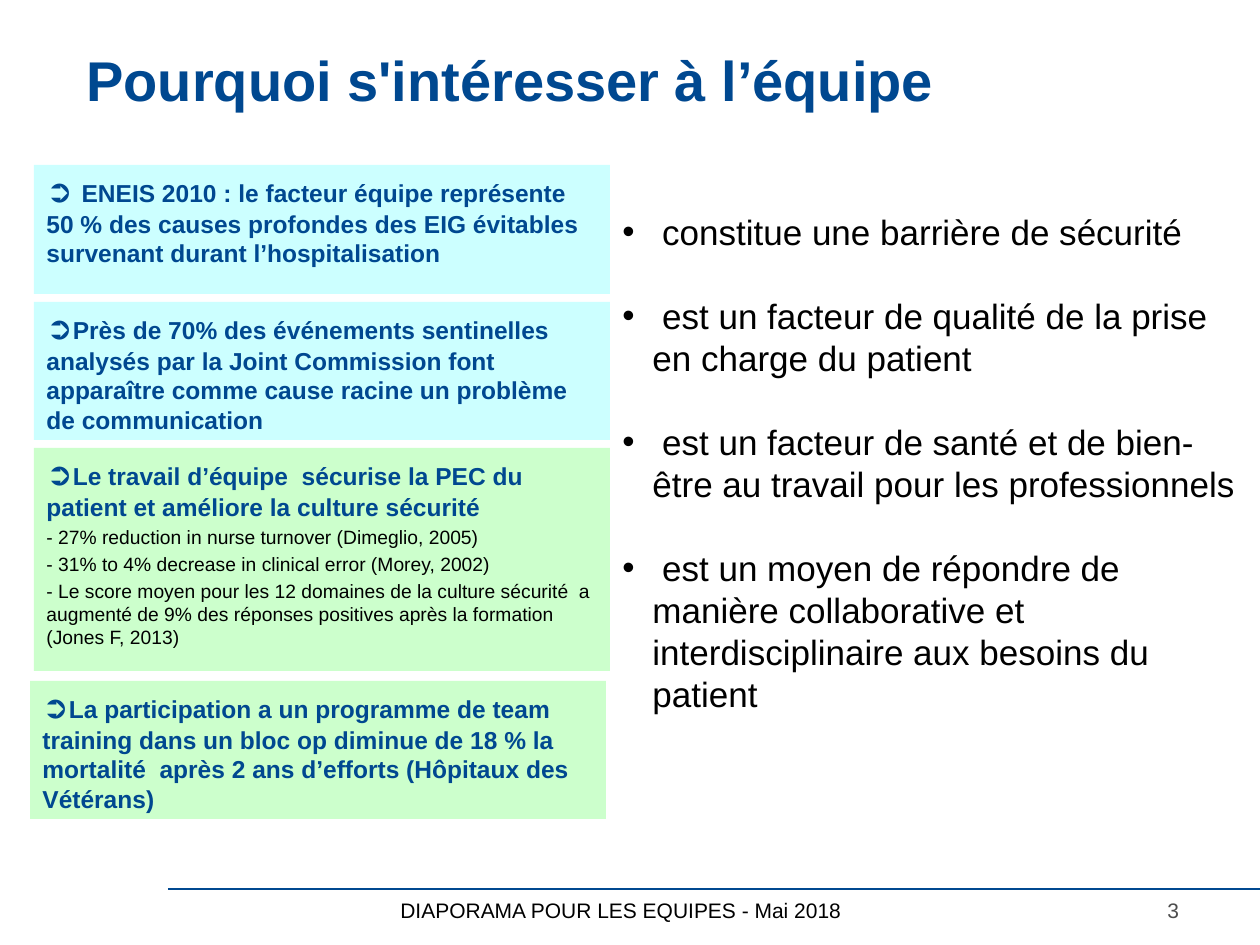
from lxml import etree
from pptx import Presentation
from pptx.dml.color import RGBColor
from pptx.enum.shapes import MSO_CONNECTOR, MSO_SHAPE
from pptx.enum.text import MSO_ANCHOR, PP_ALIGN
from pptx.oxml.ns import qn
from pptx.util import Emu, Pt

STRAIGHT = MSO_CONNECTOR.STRAIGHT
RECTANGLE = MSO_SHAPE.RECTANGLE
TOP, MIDDLE = MSO_ANCHOR.TOP, MSO_ANCHOR.MIDDLE
LEFT = PP_ALIGN.LEFT

PX_PER_INCH = 126
FONT = "Arial"
COLORS = {
    "blue": "004890",
    "black": "000000",
    "gray": "4D4D4D",
    "cyan": "CCFFFF",
    "green": "CCFFCC",
}

ARROW = "➲"
# left, top, width, height, fill, arrow, statement, details
EVIDENCE = [
    (34, 165, 576, 129, "cyan", ARROW + " ",
     "ENEIS 2010 : le facteur équipe représente 50 % des causes profondes "
     "des EIG évitables survenant durant l’hospitalisation", []),
    (34, 302, 576, 138, "cyan", ARROW,
     "Près de 70% des événements sentinelles analysés par la Joint Commission "
     "font apparaître comme cause racine un problème de communication", []),
    (34, 448, 576, 223, "green", ARROW,
     "Le travail d’équipe  sécurise la PEC du patient et améliore la culture sécurité",
     ["- 27% reduction in nurse turnover (Dimeglio, 2005)",
      "- 31% to 4% decrease in clinical error (Morey, 2002)",
      "- Le score moyen pour les 12 domaines de la culture sécurité  a augmenté "
      "de 9% des réponses positives après la formation (Jones F, 2013)"]),
    (30, 681, 576, 138, "green", ARROW,
     "La participation a un programme de team training dans un bloc op diminue "
     "de 18 % la mortalité  après 2 ans d’efforts (Hôpitaux des Vétérans)", []),
]
REASONS = [
    " constitue une barrière de sécurité",
    " est un facteur de qualité de la prise en charge du patient",
    " est un facteur de santé et de bien-être au travail pour les professionnels",
    " est un moyen de répondre de manière collaborative et interdisciplinaire "
    "aux besoins du patient",
]


def px(value):
    return Emu(round(value * 914400 / PX_PER_INCH))


def color(name):
    return RGBColor.from_string(COLORS[name])


def add_run(paragraph, text, size, color_name, bold=False):
    run = paragraph.add_run()
    run.text = text
    run.font.name = FONT
    run.font.size = Pt(size)
    run.font.bold = bold
    run.font.color.rgb = color(color_name)


def prepare_frame(shape, anchor=TOP):
    frame = shape.text_frame
    frame.word_wrap = True
    frame.vertical_anchor = anchor
    frame.margin_top = frame.margin_bottom = px(6)
    frame.paragraphs[0].alignment = LEFT
    return frame


def add_text_box(slide, left, top, width, height, anchor=TOP):
    box = slide.shapes.add_textbox(px(left), px(top), px(width), px(height))
    return prepare_frame(box, anchor)


def add_label(slide, bounds, text, size, color_name, bold=False, anchor=TOP):
    frame = add_text_box(slide, *bounds, anchor)
    add_run(frame.paragraphs[0], text, size, color_name, bold)


def add_evidence(slide, left, top, width, height, fill, arrow, statement, details):
    panel = slide.shapes.add_shape(RECTANGLE, px(left), px(top), px(width), px(height))
    panel.shadow.inherit = False
    panel.fill.solid()
    panel.fill.fore_color.rgb = color(fill)
    panel.line.fill.background()
    frame = prepare_frame(panel)
    heading = frame.paragraphs[0]
    add_run(heading, arrow, 18, "blue", True)
    add_run(heading, statement, 14, "blue", True)
    for detail in details:
        paragraph = frame.add_paragraph()
        paragraph.alignment = LEFT
        paragraph.space_before = Pt(2.3)
        add_run(paragraph, detail, 11, "black")


def set_bullet(paragraph, indent):
    properties = paragraph._p.get_or_add_pPr()
    properties.set("marL", str(px(indent)))
    properties.set("indent", str(-px(indent)))
    font = etree.SubElement(properties, qn("a:buFont"))
    font.set("typeface", FONT)
    bullet = etree.SubElement(properties, qn("a:buChar"))
    bullet.set("char", "•")


def add_reasons(slide):
    frame = add_text_box(slide, 610, 204, 650, 475)
    for index, reason in enumerate(REASONS):
        paragraph = frame.add_paragraph() if index else frame.paragraphs[0]
        set_bullet(paragraph, 30)
        paragraph.line_spacing = Pt(24)
        if index:
            paragraph.space_before = Pt(24)
        add_run(paragraph, reason, 20, "black")


def add_footer_line(slide):
    line = slide.shapes.add_connector(STRAIGHT, px(168), px(889), px(1260), px(889))
    line.line.color.rgb = color("blue")
    line.line.width = Pt(0.75)
    etree.SubElement(line._element.spPr, qn("a:effectLst"))


def main():
    presentation = Presentation()
    presentation.slide_width = px(1260)
    presentation.slide_height = px(945)
    slide = presentation.slides.add_slide(presentation.slide_layouts[6])

    add_footer_line(slide)
    add_label(slide, (1155, 892, 64, 53), "3", 12, "gray")
    add_label(slide, (74, 0, 1071, 158), "Pourquoi s'intéresser à l’équipe",
              32, "blue", True, MIDDLE)
    for evidence in EVIDENCE:
        add_evidence(slide, *evidence)
    add_reasons(slide)
    add_label(slide, (388, 892, 570, 53), "DIAPORAMA POUR LES EQUIPES - Mai 2018",
              12, "black")

    presentation.save("out.pptx")


if __name__ == "__main__":
    main()
